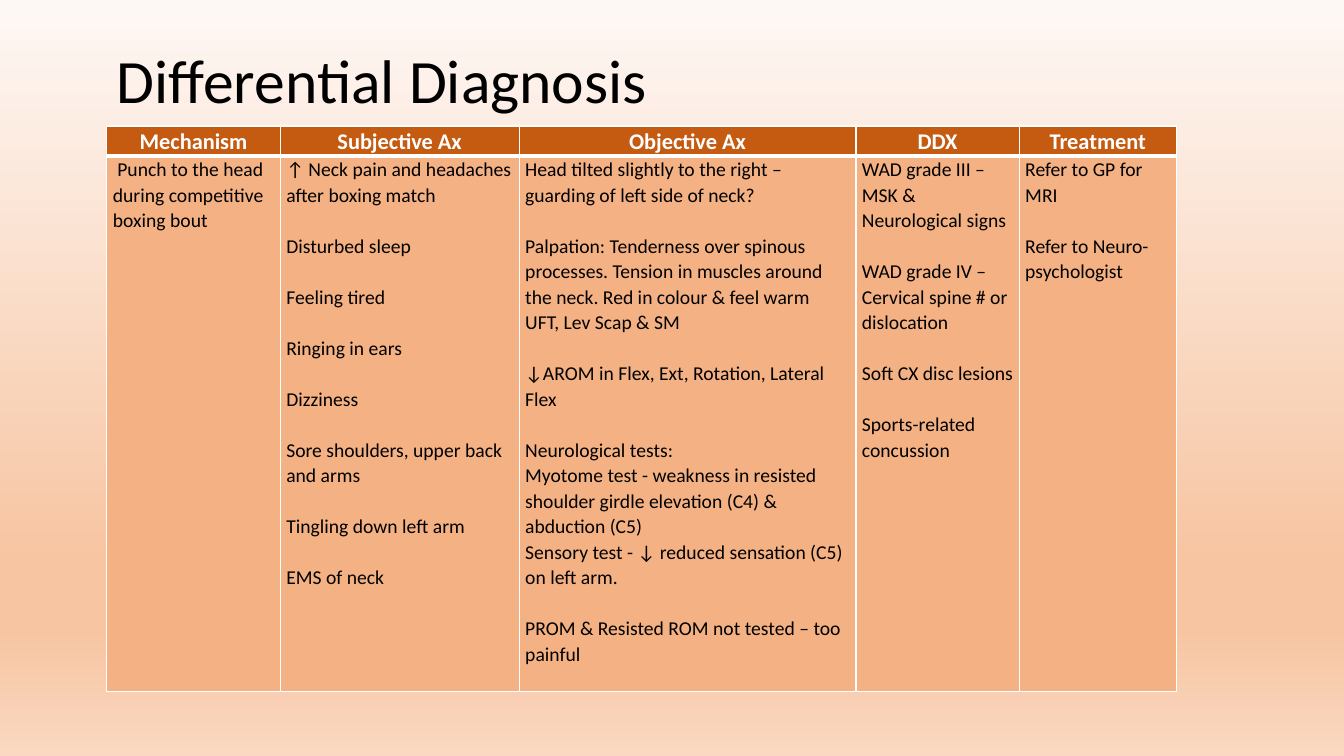
"""Build the differential diagnosis slide with its assessment table."""
import dataclasses

import lxml.etree
import pptx
import pptx.dml.color
import pptx.enum.text
import pptx.oxml.ns
import pptx.util

TITLE = "Differential Diagnosis"
COLUMNS = [
    ("Mechanism", 1.72, [[" Punch to the head during competitive boxing bout"]]),
    ("Subjective Ax", 2.37, [
        ["↑ Neck pain and headaches after boxing match"],
        ["Disturbed sleep"],
        ["Feeling tired"],
        ["Ringing in ears"],
        ["Dizziness"],
        ["Sore shoulders, upper back and arms"],
        ["Tingling down left arm"],
        ["EMS of neck"],
    ]),
    ("Objective Ax", 3.34, [
        ["Head tilted slightly to the right – guarding of left side of neck?"],
        ["Palpation: Tenderness over spinous processes. Tension in muscles "
         "around the neck. Red in colour & feel warm",
         "UFT, Lev Scap & SM"],
        ["↓AROM in Flex, Ext, Rotation, Lateral Flex"],
        ["Neurological tests:",
         "Myotome test - weakness in resisted shoulder girdle elevation (C4) "
         "& abduction (C5)",
         "Sensory test - ↓ reduced sensation (C5) on left arm."],
        ["PROM & Resisted ROM not tested – too painful"],
    ]),
    ("DDX", 1.62, [
        ["WAD grade III – MSK & Neurological signs"],
        ["WAD grade IV – Cervical spine # or dislocation"],
        ["Soft CX disc lesions"],
        ["Sports-related concussion"],
    ]),
    ("Treatment", 1.56, [["Refer to GP for MRI"], ["Refer to Neuro-psychologist"]]),
]


@dataclasses.dataclass(frozen=True)
class Theme:
    """Colours, type sizes and spacing."""
    font: str = "Calibri"
    title_size: int = 44
    header_size: int = 16
    body_size: int = 14
    group_gap: float = 18.2
    table_spacing: float = 1.07
    dark: str = "000000"
    light: str = "FFFFFF"
    header_fill: str = "C55A11"
    body_fill: str = "F4B183"
    background: tuple = ((0, "FEF8F5"), (74, "F7C5A2"), (83, "F7C5A2"), (100, "FAD8C1"))


THEME = Theme()
WIDTH, HEIGHT = 13.33, 7.5
LEFT, TABLE_TOP = 1.06, 1.25
TITLE_TOP, TITLE_HEIGHT = 0.41, 0.84
ROW_HEIGHTS = (0.3, 5.31)
TABLE_WIDTH = sum(width for _, width, _ in COLUMNS)


def inches(*lengths):
    return [pptx.util.Inches(length) for length in lengths]


def add_child(parent, tag, **attributes):
    return lxml.etree.SubElement(parent, pptx.oxml.ns.qn(tag), attributes)


def add_run(paragraph, text, size, color, bold=False):
    run = paragraph.add_run()
    run.text = text
    run.font.name = THEME.font
    run.font.size = pptx.util.Pt(size)
    run.font.bold = bold
    run.font.color.rgb = pptx.dml.color.RGBColor.from_string(color)


def paint_background(slide):
    fill = slide.background.fill
    fill.gradient()
    fill.gradient_angle = 270
    stops = next(slide.element.iter(pptx.oxml.ns.qn("a:gsLst")))
    for stop in list(stops):
        stops.remove(stop)
    for position, color in THEME.background:
        stop = add_child(stops, "a:gs", pos=str(position * 1000))
        add_child(stop, "a:srgbClr", val=color)


def style_cell(cell, fill, bottom_width):
    cell.margin_left = cell.margin_right = pptx.util.Inches(0.06)
    cell.margin_top = cell.margin_bottom = 0
    properties = cell._tc.get_or_add_tcPr()
    for side, width in (("L", 1), ("R", 1), ("T", 1), ("B", bottom_width)):
        line = add_child(properties, f"a:ln{side}", w=str(pptx.util.Pt(width)))
        add_child(add_child(line, "a:solidFill"), "a:srgbClr", val=THEME.light)
    cell.fill.solid()
    cell.fill.fore_color.rgb = pptx.dml.color.RGBColor.from_string(fill)


def fill_header(cell, text):
    style_cell(cell, THEME.header_fill, 3)
    paragraph = cell.text_frame.paragraphs[0]
    paragraph.alignment = pptx.enum.text.PP_ALIGN.CENTER
    paragraph.line_spacing = THEME.table_spacing
    add_run(paragraph, text, THEME.header_size, THEME.light, True)


def fill_body(cell, groups):
    style_cell(cell, THEME.body_fill, 1)
    frame = cell.text_frame
    for group_index, group in enumerate(groups):
        for line_index, text in enumerate(group):
            first = group_index == line_index == 0
            paragraph = frame.paragraphs[0] if first else frame.add_paragraph()
            paragraph.line_spacing = THEME.table_spacing
            if group_index and not line_index:
                paragraph.space_before = pptx.util.Pt(THEME.group_gap)
            add_run(paragraph, text, THEME.body_size, THEME.dark)


def add_title(slide):
    title = slide.shapes.title
    title.left, title.top, title.width, title.height = inches(
        LEFT, TITLE_TOP, TABLE_WIDTH, TITLE_HEIGHT)
    title.text_frame.vertical_anchor = pptx.enum.text.MSO_ANCHOR.MIDDLE
    paragraph = title.text_frame.paragraphs[0]
    paragraph.alignment = pptx.enum.text.PP_ALIGN.LEFT
    paragraph.line_spacing = 0.9
    add_run(paragraph, TITLE, THEME.title_size, THEME.dark)


def add_diagnosis_table(slide):
    table = slide.shapes.add_table(
        len(ROW_HEIGHTS), len(COLUMNS),
        *inches(LEFT, TABLE_TOP, TABLE_WIDTH, sum(ROW_HEIGHTS))).table
    for row, height in zip(table.rows, ROW_HEIGHTS):
        row.height = pptx.util.Inches(height)
    for index, (heading, width, groups) in enumerate(COLUMNS):
        table.columns[index].width = pptx.util.Inches(width)
        fill_header(table.cell(0, index), heading)
        fill_body(table.cell(1, index), groups)


def main():
    presentation = pptx.Presentation()
    presentation.slide_width, presentation.slide_height = inches(WIDTH, HEIGHT)
    slide = presentation.slides.add_slide(presentation.slide_layouts[5])
    paint_background(slide)
    add_title(slide)
    add_diagnosis_table(slide)
    presentation.save("out.pptx")


if __name__ == "__main__":
    main()
